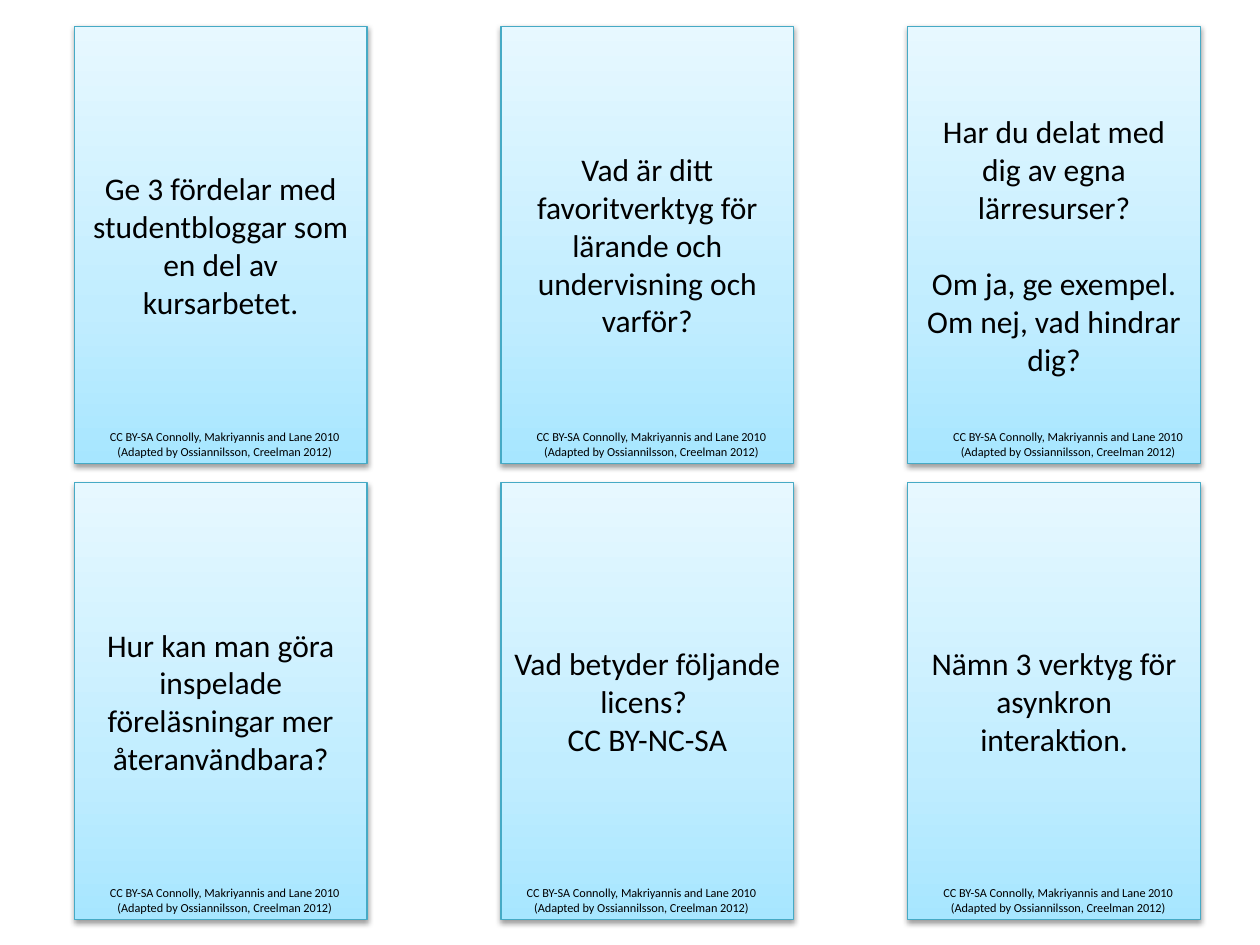
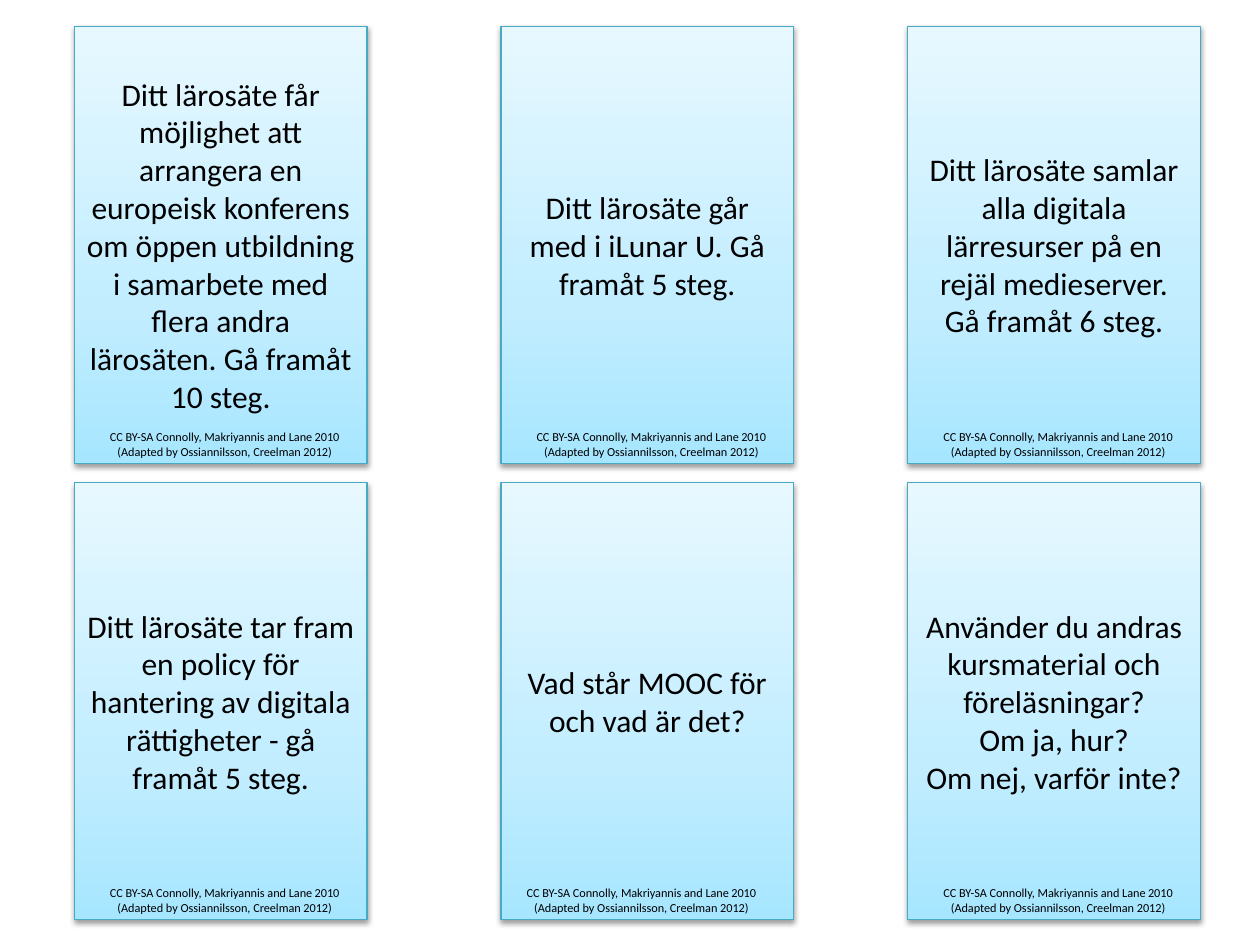
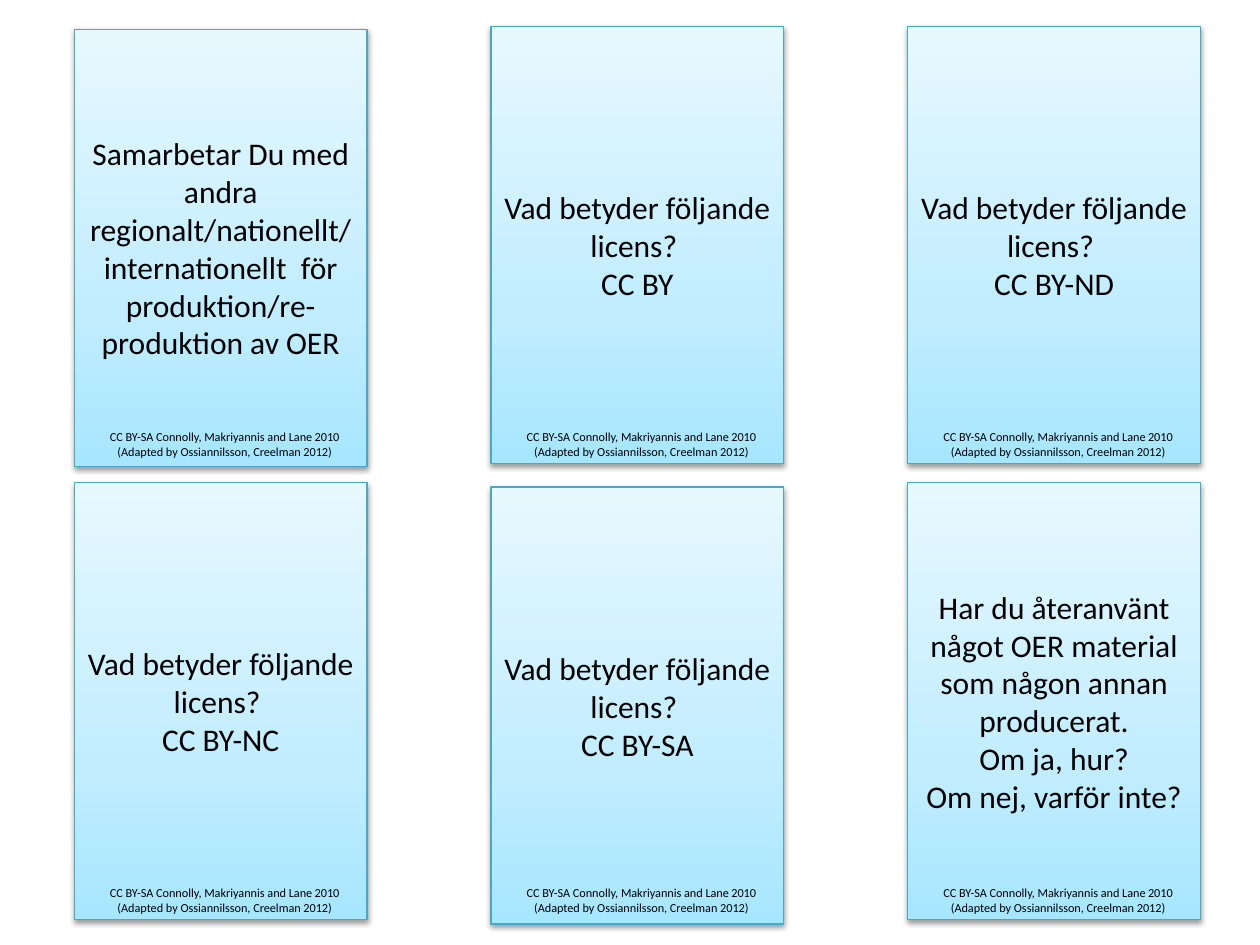
from copy import deepcopy
from lxml import etree
from pptx import Presentation
from pptx.dml.color import RGBColor
from pptx.enum import shapes, text
from pptx.oxml.ns import qn
from pptx.util import Cm, Pt

# Content: six cards a slide, row by row; each card is a list of paragraphs
ASK = "Vad betyder följande licens? "
DECKS = [
    [
        ["Ge 3 fördelar med studentbloggar som en del av kursarbetet."],
        ["Vad är ditt favoritverktyg för lärande och undervisning och varför?"],
        ["Har du delat med dig av egna lärresurser?",
         "Om ja, ge exempel. Om nej, vad hindrar dig?"],
        ["Hur kan man göra inspelade föreläsningar mer återanvändbara?"],
        [ASK, "CC BY-NC-SA"],
        ["Nämn 3 verktyg för asynkron interaktion."],
    ],
    [
        ["Ditt lärosäte får möjlighet att arrangera en europeisk konferens om "
         "öppen utbildning i samarbete med flera andra lärosäten. "
         "Gå framåt 10 steg."],
        ["Ditt lärosäte går med i iLunar U. Gå framåt 5 steg."],
        ["Ditt lärosäte samlar alla digitala lärresurser på en rejäl "
         "medieserver. Gå framåt 6 steg."],
        ["Ditt lärosäte tar fram en policy för hantering av digitala "
         "rättigheter - gå framåt 5 steg."],
        ["Vad står MOOC för och vad är det?"],
        ["Använder du andras kursmaterial och föreläsningar?",
         "Om ja, hur?", "Om nej, varför inte?"],
    ],
    [
        ["Samarbetar Du med andra regionalt/nationellt/internationellt  för "
         "produktion/re-produktion av OER"],
        [ASK, "CC BY"],
        [ASK, "CC BY-ND"],
        [ASK, "CC BY-NC"],
        [ASK, "CC BY-SA"],
        ["Har du återanvänt något OER material som någon annan producerat.",
         "Om ja, hur?", "Om nej, varför inte?"],
    ],
]
CREDIT = [
    [("CC BY-SA Connolly, Makriyannis and Lane", 7), (" ", 6), ("2010", 7)],
    [("(Adapted by Ossiannilsson, Creelman 2012)", 7)],
]

# Grid, in centimetres
COLS, STEP, DROP = 3, 8.4, 9.2
LEFT, TOP, WIDE, HIGH = 1.5, 0.53, 5.9, 8.81
NOTE_X, NOTE_Y, NOTE_W, NOTE_H = 1.9, 8.53, 5.26, 0.86

# Offsets from the grid, by (slide, card)
CARD_OFF = {(0, 1): (0.2, 0), (0, 4): (0.2, 0), (1, 1): (0.2, 0),
            (1, 4): (0.2, 0), (2, 0): (0, 0.06), (2, 4): (0, 0.09)}
NOTE_OFF = {(0, 1): (0.2, 0), (0, 2): (0.2, 0), (1, 1): (0.2, 0)}
GAPS = {(0, 2): 22}  # points between the card's paragraphs

# Style
FONT = "Calibri"
INK = RGBColor(0x00, 0x00, 0x00)
EDGE = RGBColor(0x46, 0xAA, 0xC5)
FADE = [(0, RGBColor(0xA7, 0xE6, 0xFF)),
        (0.35, RGBColor(0xC1, 0xED, 0xFF)),
        (1, RGBColor(0xE7, 0xF8, 0xFF))]


def place(x, y, num, off):
    row, col = divmod(num, COLS)
    return Cm(x + col * STEP + off[0]), Cm(y + row * DROP + off[1])


def style(par, size):
    par.alignment = text.PP_ALIGN.CENTER
    par.font.name, par.font.size = FONT, Pt(size)
    par.font.color.rgb = INK


def fade(box):
    box.fill.gradient()
    box.fill.gradient_angle = 90
    stops = box._element.spPr.find(".//" + qn("a:gsLst"))
    stops.append(deepcopy(stops[0]))
    for stop, (pos, tint) in zip(box.fill.gradient_stops, FADE):
        stop.position, stop.color.rgb = pos, tint


def shade(box):
    box.shadow.inherit = False
    glow = box._element.spPr.find(qn("a:effectLst"))
    cast = etree.SubElement(glow, qn("a:outerShdw"), blurRad="40000",
                            dist="20000", dir="5400000", rotWithShape="0")
    tone = etree.SubElement(cast, qn("a:srgbClr"), val=str(INK))
    etree.SubElement(tone, qn("a:alpha"), val="38000")


def add_card(slide, spot, lines, gap):
    box = slide.shapes.add_shape(shapes.MSO_SHAPE.RECTANGLE, *spot,
                                 Cm(WIDE), Cm(HIGH))
    fade(box)
    box.line.color.rgb, box.line.width = EDGE, Pt(0.75)
    shade(box)
    frame = box.text_frame
    frame.vertical_anchor = text.MSO_ANCHOR.MIDDLE
    for i, line in enumerate(lines):
        par = frame.add_paragraph() if i else frame.paragraphs[0]
        par.text = line
        style(par, 18)
        if i and gap:
            par.space_before = Pt(gap)


def add_note(slide, spot):
    frame = slide.shapes.add_textbox(*spot, Cm(NOTE_W), Cm(NOTE_H)).text_frame
    frame.word_wrap = False
    frame.auto_size = text.MSO_AUTO_SIZE.SHAPE_TO_FIT_TEXT
    for i, runs in enumerate(CREDIT):
        par = frame.add_paragraph() if i else frame.paragraphs[0]
        style(par, 7)
        for words, size in runs:
            run = par.add_run()
            run.text = words
            if size != 7:
                run.font.size = Pt(size)


def main():
    prs = Presentation()
    prs.slide_width, prs.slide_height = Cm(25.4), Cm(19.05)
    for page, cards in enumerate(DECKS):
        slide = prs.slides.add_slide(prs.slide_layouts[6])
        for num, lines in enumerate(cards):
            key = page, num
            spot = place(LEFT, TOP, num, CARD_OFF.get(key, (0, 0)))
            add_card(slide, spot, lines, GAPS.get(key))
        for num in range(len(cards)):
            off = NOTE_OFF.get((page, num), (0, 0))
            add_note(slide, place(NOTE_X, NOTE_Y, num, off))
    prs.save("out.pptx")


if __name__ == "__main__":
    main()
